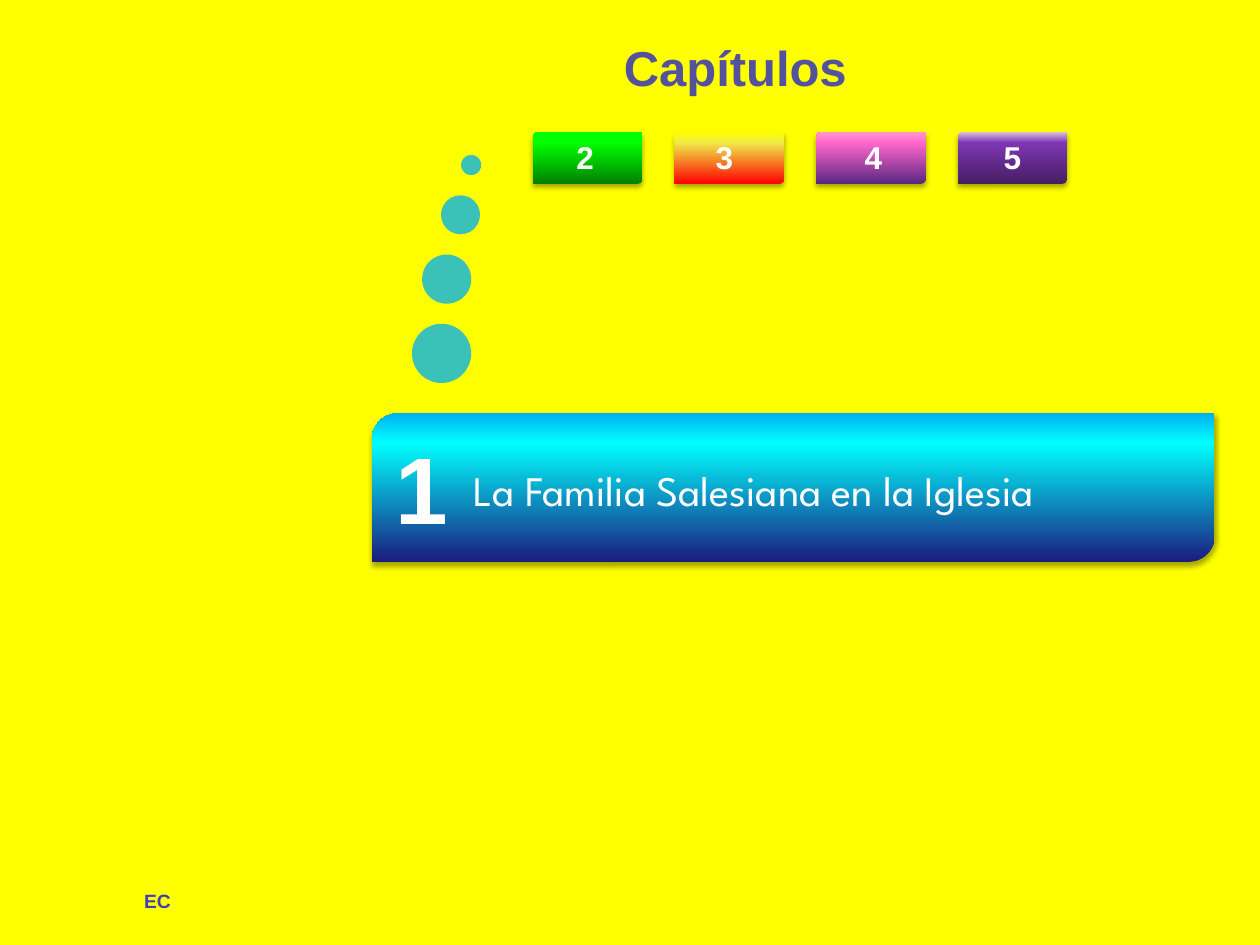
from dataclasses import dataclass

from lxml.etree import SubElement
from pptx import Presentation
from pptx.dml.color import RGBColor
from pptx.enum.shapes import MSO_SHAPE
from pptx.enum.text import MSO_AUTO_SIZE, PP_ALIGN
from pptx.oxml.ns import qn
from pptx.util import Inches, Pt


@dataclass(frozen=True)
class Theme:
    background: str = "FFFF00"
    white: str = "FFFFFF"
    numeral: str = "FEFEFE"
    numeral_outline: str = "202086"
    shadow: str = "000000"
    dot: str = "00B0F0"
    dot_opacity: int = 77
    title_ink: tuple = ((0, "5F5FA1"), (25, "52529D"), (50, "262688"),
                        (75, "52529D"), (100, "5F5FA1"))
    mark_ink: tuple = ((0, "00005B"), (78, "4040B3"), (100, "EFEFF7"))
    banner: tuple = ((0, "1B1B7E"), (80, "00FFFF"), (100, "00B0F0"))
    green: tuple = ((0, "008000"), (80, "00FF00"), (100, "00FF00"))
    orange: tuple = ((0, "FF0000"), (80, "EFEB47"), (100, "FFFF00"))
    pink: tuple = ((0, "5A2781"), (80, "FF66CC"), (100, "FF99CC"))
    purple: tuple = ((0, "461E64"), (80, "7E36B4"), (100, "D9BFD7"))
    body_font: str = "Arial"
    chapter_font: str = "League Spartan"
    mark_size: int = 11
    button_size: int = 18
    chapter_size: int = 24
    title_size: int = 28
    numeral_size: int = 54


THEME = Theme()


def add_color(parent, color, opacity=100):
    node = SubElement(parent, qn("a:srgbClr"), val=color)
    if opacity < 100:
        SubElement(node, qn("a:alpha"), val=str(opacity * 1000))


def paint_solid(fill, color):
    fill.solid()
    fill.fore_color.rgb = RGBColor.from_string(color)


def paint_gradient(fill, element, stops, angle):
    fill.gradient()
    fill.gradient_angle = angle
    stop_list = element.find(".//" + qn("a:gsLst"))
    for old_stop in list(stop_list):
        stop_list.remove(old_stop)
    for position, color in stops:
        add_color(SubElement(stop_list, qn("a:gs"), pos=str(position * 1000)), color)


def add_shadow(effects, blur, distance, direction, opacity):
    shadow = SubElement(effects, qn("a:outerShdw"), blurRad=str(Pt(blur)),
                        dist=str(Pt(distance)), dir=str(direction * 60000),
                        algn="tl", rotWithShape="0")
    add_color(shadow, THEME.shadow, opacity)


def add_run(paragraph, text, size, font, color, bold):
    run = paragraph.add_run()
    run.text = text
    run.font.size = Pt(size)
    run.font.bold = bold
    run.font.name = font
    if isinstance(color, str):
        paint_solid(run.font.fill, color)
    else:
        paint_gradient(run.font.fill, run._r, color, 270)
    return run


def add_text(slide, text, box, *, size, color, font=THEME.body_font, bold=True,
             align=PP_ALIGN.CENTER, wrap=True, shadow=False, outline=None,
             trailing_size=None):
    label = slide.shapes.add_textbox(*map(Inches, box))
    frame = label.text_frame
    frame.word_wrap = wrap
    frame.auto_size = MSO_AUTO_SIZE.SHAPE_TO_FIT_TEXT
    paragraph = frame.paragraphs[0]
    paragraph.alignment = align
    run = add_run(paragraph, text, size, font, color, bold)
    properties = run._r.get_or_add_rPr()
    if shadow:
        effects = SubElement(properties, qn("a:effectLst"))
        properties.find(qn("a:latin")).addprevious(effects)
        add_shadow(effects, 4, 3, 45, 60)
    if outline:
        properties.set("spc", "50")
        line = SubElement(properties, qn("a:ln"), w=str(Pt(1)))
        add_color(SubElement(line, qn("a:solidFill")), outline)
        properties.insert(0, line)
    if trailing_size:
        add_run(paragraph, " ", trailing_size, font, color, bold)


def add_panel(slide, box, stops, rounding):
    panel = slide.shapes.add_shape(MSO_SHAPE.ROUND_2_DIAG_RECTANGLE, *map(Inches, box))
    panel.adjustments[0] = rounding
    panel.adjustments[1] = 0
    paint_gradient(panel.fill, panel._element.spPr, stops, 90)
    panel.line.fill.background()
    panel.shadow.inherit = False
    add_shadow(panel._element.spPr.find(qn("a:effectLst")), 3.1, 1.8, 90, 35)


def add_dot(slide, left, top, diameter):
    dot = slide.shapes.add_shape(
        MSO_SHAPE.OVAL, *map(Inches, (left, top, diameter, diameter)))
    paint_solid(dot.fill, THEME.dot)
    color = dot._element.spPr.find(".//" + qn("a:srgbClr"))
    SubElement(color, qn("a:alpha"), val=str(THEME.dot_opacity * 1000))
    dot.line.fill.background()
    dot.shadow.inherit = False


def add_banner(slide):
    add_panel(slide, (2.95, 3.28, 6.69, 1.18), THEME.banner, 0.18)
    add_text(slide, "1", (3.03, 3.36, 0.63, 1.01), size=THEME.numeral_size,
             color=THEME.numeral, wrap=False, shadow=True,
             outline=THEME.numeral_outline)
    add_text(slide, "La Familia Salesiana en la Iglesia", (3.66, 3.64, 5.83, 0.5),
             size=THEME.chapter_size, color=THEME.white, font=THEME.chapter_font,
             bold=False, align=PP_ALIGN.LEFT, shadow=True)


def add_buttons(slide):
    first_left, last_left, top, width = 4.23, 7.6, 1.05, 0.87
    buttons = (("2", THEME.green, -0.02), ("3", THEME.orange, -0.04),
               ("4", THEME.pink, 0.02), ("5", THEME.purple, 0))
    pitch = (last_left - first_left) / (len(buttons) - 1)
    for index, (number, stops, nudge) in enumerate(buttons):
        left = first_left + index * pitch
        add_panel(slide, (left, top, width, 0.41), stops, 0.1)
        add_text(slide, number, (left + nudge, top, width, 0.4),
                 size=THEME.button_size, color=THEME.white)


def main():
    presentation = Presentation()
    presentation.slide_width = Inches(10)
    presentation.slide_height = Inches(7.5)
    slide = presentation.slides.add_slide(presentation.slide_layouts[6])
    paint_solid(slide.background.fill, THEME.background)

    add_text(slide, "EC", (1.04, 7.01, 0.42, 0.29), size=THEME.mark_size,
             color=THEME.mark_ink, wrap=False)
    add_banner(slide)
    add_buttons(slide)
    add_text(slide, "Capítulos", (4.84, -0.11, 2.2, 1.01), size=THEME.title_size,
             color=THEME.title_ink, trailing_size=THEME.numeral_size)
    for left, top, diameter in ((3.66, 1.23, 0.16), (3.5, 1.55, 0.31),
                                (3.35, 2.02, 0.39), (3.27, 2.57, 0.47)):
        add_dot(slide, left, top, diameter)

    presentation.save("out.pptx")


if __name__ == "__main__":
    main()
